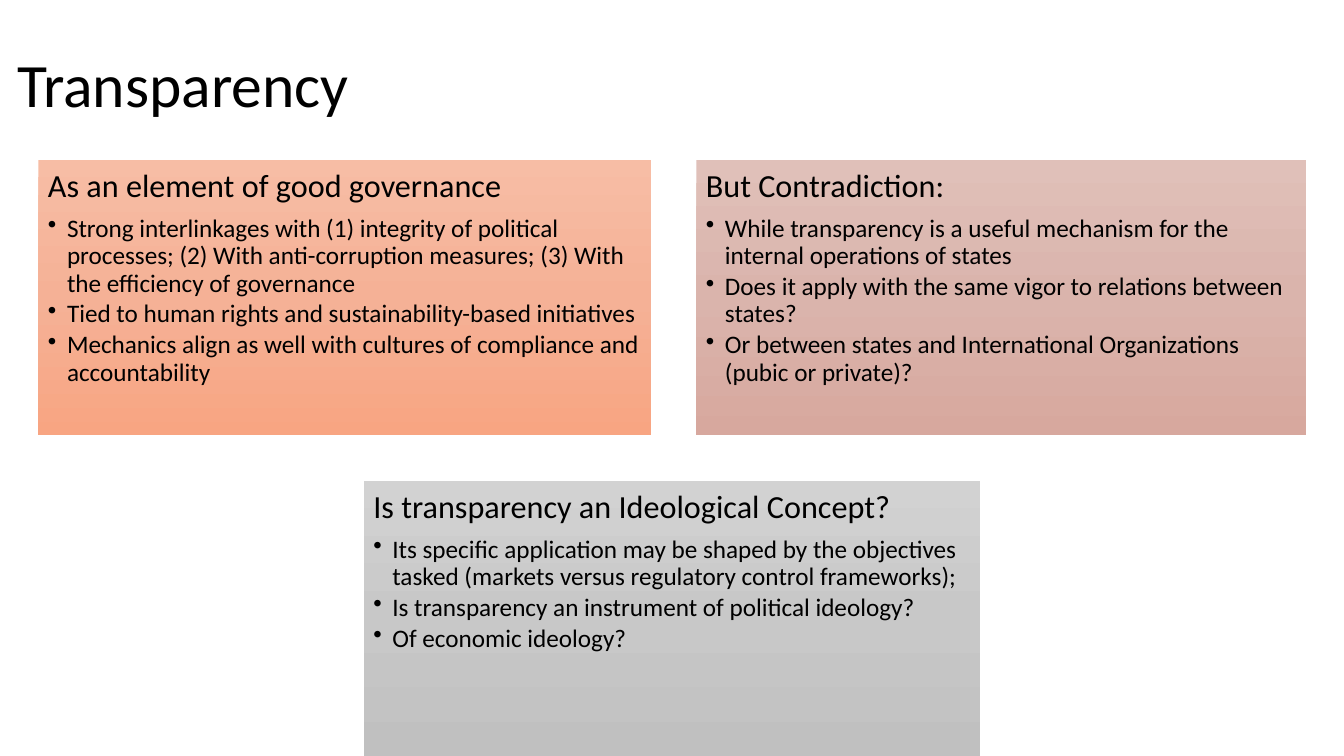
import copy

import pptx
import pptx.enum.shapes
import pptx.enum.text
import pptx.oxml
import pptx.oxml.ns
import pptx.util
from pptx.dml.color import RGBColor
from pptx.util import Cm, Pt

FONT = "Calibri"
BLACK = RGBColor(0x00, 0x00, 0x00)
ORANGE = [RGBColor(0xF7, 0xBD, 0xA5), RGBColor(0xF5, 0xB1, 0x96), RGBColor(0xF8, 0xA5, 0x82)]
ROSE = [RGBColor(0xE0, 0xC0, 0xB9), RGBColor(0xDA, 0xB4, 0xAC), RGBColor(0xD7, 0xA8, 0x9E)]
GRAY = [RGBColor(0xD2, 0xD2, 0xD2), RGBColor(0xC8, 0xC8, 0xC8), RGBColor(0xC0, 0xC0, 0xC0)]

PANEL_HEIGHT = 6.93
TOP_ROW = 4.04
BOTTOM_ROW = 12.12

# Left, top and width in centimetres, gradient, heading, bullets
PANELS = [
    (0.97, TOP_ROW, 15.44, ORANGE, "As an element of good governance", [
        "Strong interlinkages with (1) integrity of political processes; "
        "(2) With anti-corruption measures; (3) With the efficiency of governance",
        "Tied to human rights and sustainability-based initiatives",
        "Mechanics align as well with cultures of compliance and accountability",
    ]),
    (17.55, TOP_ROW, 15.37, ROSE, "But Contradiction:", [
        "While transparency is a useful mechanism for the internal operations of states",
        "Does it apply with the same vigor to relations between states?",
        "Or between states and International Organizations (pubic or private)?",
    ]),
    (9.17, BOTTOM_ROW, 15.54, GRAY, "Is transparency an Ideological Concept?", [
        "Its specific application may be shaped by the objectives tasked "
        "(markets versus regulatory control frameworks);",
        "Is transparency an instrument of political ideology?",
        "Of economic ideology?",
    ]),
]


def write_paragraph(paragraph, text, size, space_after=0):
    paragraph.alignment = pptx.enum.text.PP_ALIGN.LEFT
    paragraph.line_spacing = 0.9
    paragraph.space_after = Pt(space_after)
    run = paragraph.add_run()
    run.text = text
    run.font.name = FONT
    run.font.size = Pt(size)
    run.font.color.rgb = BLACK


def add_bullet(paragraph):
    paragraph.level = 1
    properties = paragraph._p.get_or_add_pPr()
    properties.set("marL", str(Cm(0.48)))
    properties.set("indent", str(-Cm(0.48)))
    bullet = pptx.oxml.parse_xml(
        f'<a:buChar {pptx.oxml.ns.nsdecls("a")} char="•"/>')
    properties.append(bullet)


def fill_gradient(shape, colors):
    """Fill from top to bottom with three evenly spaced colours."""
    fill = shape.fill
    fill.gradient()
    fill.gradient_angle = 270
    stop_list = shape._element.spPr.find(".//" + pptx.oxml.ns.qn("a:gsLst"))
    stop_list.insert(1, copy.deepcopy(stop_list[0]))
    for stop, color, position in zip(fill.gradient_stops, colors, (0, 0.5, 1)):
        stop.color.rgb = color
        stop.position = position


def add_title(slide, text):
    box = slide.shapes.add_textbox(Cm(0.18), Cm(0.36), Cm(29.21), Cm(3.68))
    frame = box.text_frame
    frame.word_wrap = True
    frame.vertical_anchor = pptx.enum.text.MSO_ANCHOR.MIDDLE
    write_paragraph(frame.paragraphs[0], text, 44)


def add_panel(slide, left, top, width, colors, heading, bullets):
    panel = slide.shapes.add_shape(
        pptx.enum.shapes.MSO_SHAPE.RECTANGLE,
        Cm(left), Cm(top), Cm(width), Cm(PANEL_HEIGHT))
    panel.shadow.inherit = False
    panel.line.fill.background()
    fill_gradient(panel, colors)

    frame = panel.text_frame
    frame.word_wrap = True
    frame.vertical_anchor = pptx.enum.text.MSO_ANCHOR.TOP
    frame.margin_left = frame.margin_right = Cm(0.24)
    frame.margin_top = frame.margin_bottom = Cm(0.24)
    write_paragraph(frame.paragraphs[0], heading, 23, space_after=8)
    for text in bullets:
        paragraph = frame.add_paragraph()
        add_bullet(paragraph)
        write_paragraph(paragraph, text, 18, space_after=2.7)


def main():
    presentation = pptx.Presentation()
    presentation.slide_width = Cm(33.87)
    presentation.slide_height = Cm(19.05)
    slide = presentation.slides.add_slide(presentation.slide_layouts[6])

    # Title
    add_title(slide, "Transparency")

    # Two panels above, one centred below
    for panel in PANELS:
        add_panel(slide, *panel)

    presentation.save("out.pptx")


if __name__ == "__main__":
    main()
